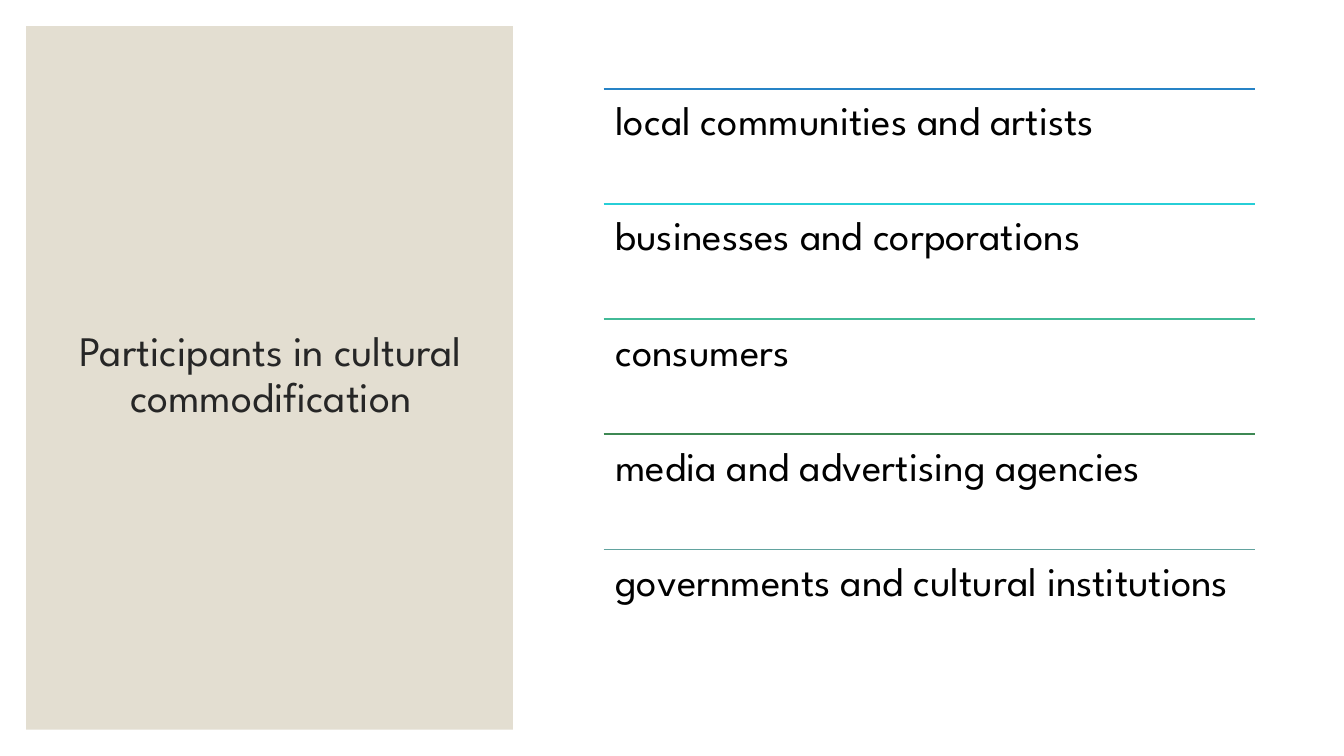
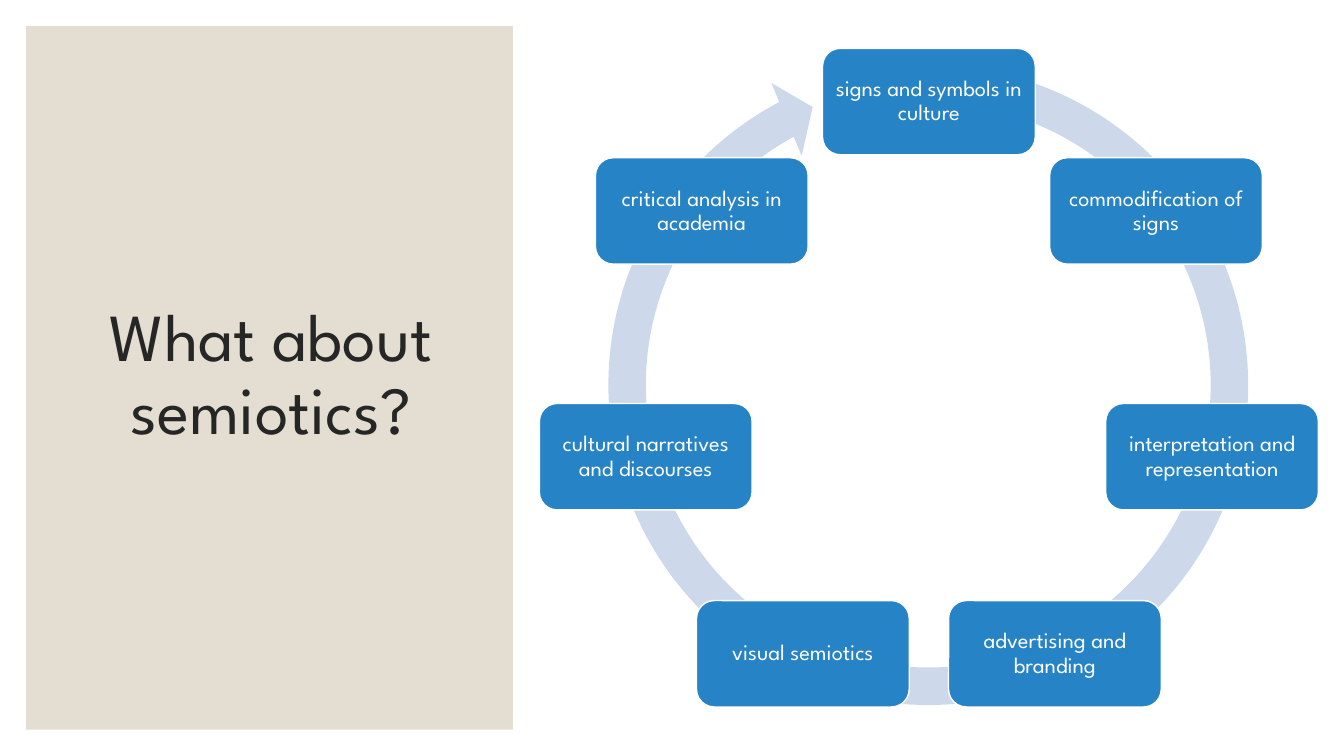
from dataclasses import dataclass
from math import cos, pi, sin

from lxml.etree import SubElement
from pptx import Presentation
from pptx.dml.color import RGBColor
from pptx.enum.shapes import MSO_CONNECTOR, MSO_SHAPE
from pptx.enum.text import MSO_ANCHOR, PP_ALIGN
from pptx.oxml.ns import qn
from pptx.util import Cm, Pt


@dataclass(frozen=True)
class Theme:
    font: str = "League Spartan"
    panel: str = "E3DED1"
    title: str = "262626"
    text: str = "000000"
    white: str = "FFFFFF"
    accent: str = "2683C6"
    ring: str = "CDD9EA"
    rules: tuple = ("2683C6", "27CED7", "42BA97", "3E8853", "62A39F")
    list_size: int = 29
    step_size: int = 16


theme = Theme()


def write_text(shape, text, size, color, inset, anchor=MSO_ANCHOR.MIDDLE,
               alignment=PP_ALIGN.CENTER):
    frame = shape.text_frame
    frame.word_wrap = True
    frame.vertical_anchor = anchor
    frame.margin_left = frame.margin_right = Cm(inset)
    frame.margin_top = frame.margin_bottom = Cm(inset)
    paragraph = frame.paragraphs[0]
    paragraph.alignment = alignment
    paragraph.line_spacing = 0.9
    run = paragraph.add_run()
    run.text = text
    run.font.name = theme.font
    run.font.size = Pt(size)
    run.font.color.rgb = RGBColor.from_string(color)


def add_filled_shape(slide, kind, left, top, width, height, fill, outline=None):
    """Add a shadowless preset shape; lengths are in centimetres."""
    shape = slide.shapes.add_shape(kind, Cm(left), Cm(top), Cm(width), Cm(height))
    shape.shadow.inherit = False
    shape.fill.solid()
    shape.fill.fore_color.rgb = RGBColor.from_string(fill)
    if outline:
        shape.line.color.rgb = RGBColor.from_string(outline)
        shape.line.width = Pt(1)
    else:
        shape.line.fill.background()
    return shape


presentation = Presentation()
presentation.slide_width = Cm(33.87)
presentation.slide_height = Cm(19.05)

# Both slides: a beige panel with a centred title
slides = []
for title, title_size in (("Participants in cultural commodification", 30),
                          ("What about semiotics?", 48)):
    slide = presentation.slides.add_slide(presentation.slide_layouts[6])
    add_filled_shape(slide, MSO_SHAPE.RECTANGLE, 0.66, 0.66, 12.27, 17.73, theme.panel)
    title_box = slide.shapes.add_textbox(Cm(1.6), Cm(1.55), Cm(10.46), Cm(15.85))
    write_text(title_box, title, title_size, theme.title, inset=0.25)
    slides.append(slide)
participants_slide, semiotics_slide = slides

# Slide 1: ruled list of participants
participants = ("local communities and artists", "businesses and corporations",
                "consumers", "media and advertising agencies",
                "governments and cultural institutions")
list_left, list_top, list_width, row_height = 15.21, 2.24, 16.41, 2.9
for row, (participant, color) in enumerate(zip(participants, theme.rules)):
    top = Cm(list_top + row * row_height)
    rule = participants_slide.shapes.add_connector(
        MSO_CONNECTOR.STRAIGHT, Cm(list_left), top, Cm(list_left + list_width), top)
    rule.line.color.rgb = RGBColor.from_string(color)
    rule.line.width = Pt(1)
    SubElement(rule.element.spPr, qn("a:effectLst"))
    row_box = participants_slide.shapes.add_textbox(
        Cm(list_left), top, Cm(list_width), Cm(row_height))
    write_text(row_box, participant, theme.list_size, theme.text, inset=0.3,
               anchor=MSO_ANCHOR.TOP, alignment=PP_ALIGN.LEFT)

# Slide 2: steps spaced evenly, clockwise from the top of a circular arrow
steps = ("signs and symbols in culture", "commodification of signs",
         "interpretation and representation", "advertising and branding",
         "visual semiotics", "cultural narratives and discourses",
         "critical analysis in academia")
ring = add_filled_shape(semiotics_slide, MSO_SHAPE.CIRCULAR_ARROW,
                        14.81, 1.12, 17.17, 17.17, theme.ring)
for index, value in enumerate((0.055, 3.307, 145.147, 169.508, 0.058)):
    ring.adjustments[index] = value

center_x, center_y, radius = 23.41, 9.88, 7.32
step_width, step_height = 5.36, 2.68
for index, step in enumerate(steps):
    angle = 2 * pi * index / len(steps)
    step_box = add_filled_shape(
        semiotics_slide, MSO_SHAPE.ROUNDED_RECTANGLE,
        center_x + radius * sin(angle) - step_width / 2,
        center_y - radius * cos(angle) - step_height / 2,
        step_width, step_height, theme.accent, theme.white)
    write_text(step_box, step, theme.step_size, theme.white, inset=0.17)

presentation.save("out.pptx")
